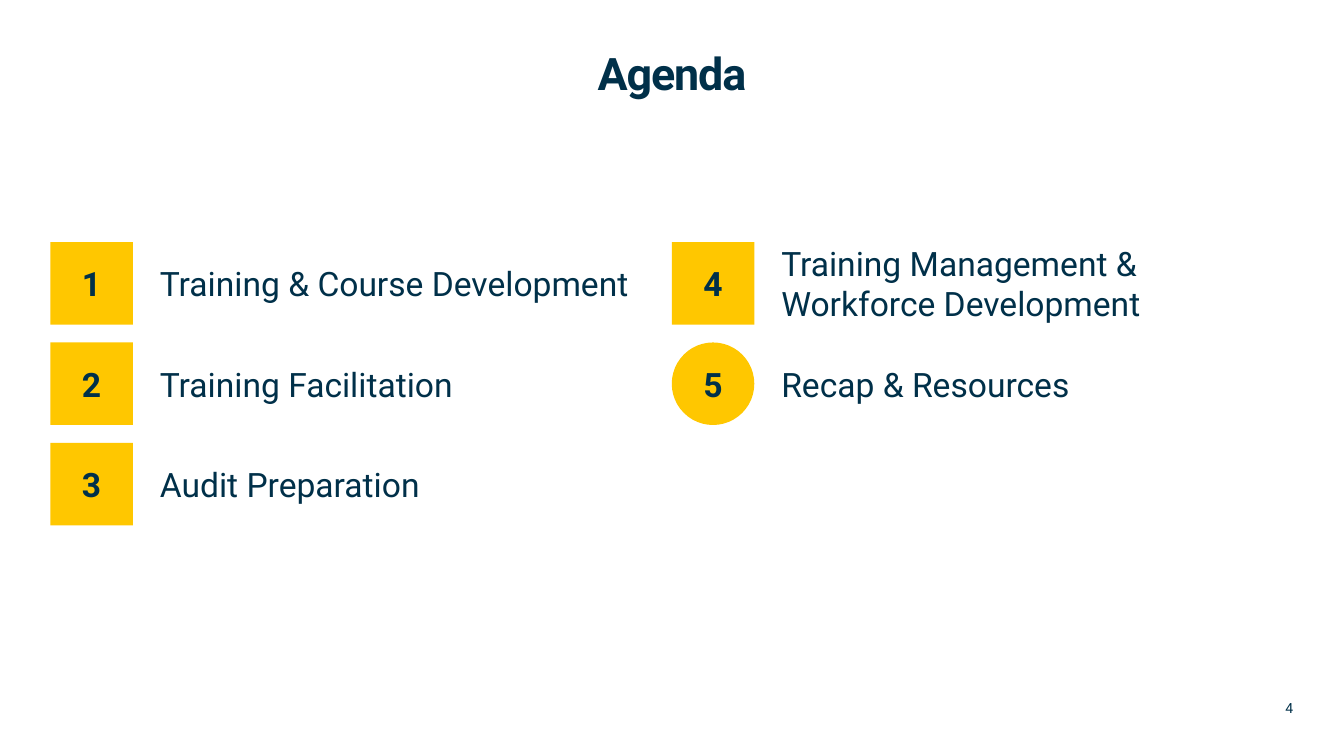
from dataclasses import dataclass

from pptx import Presentation
from pptx.dml.color import RGBColor
from pptx.enum.shapes import MSO_SHAPE
from pptx.enum.text import MSO_ANCHOR, MSO_AUTO_SIZE, PP_ALIGN
from pptx.slide import Slide
from pptx.util import Cm, Pt

SQUARE, CIRCLE = MSO_SHAPE.RECTANGLE, MSO_SHAPE.OVAL
TOP, MIDDLE = MSO_ANCHOR.TOP, MSO_ANCHOR.MIDDLE
LEFT, CENTER, RIGHT = PP_ALIGN.LEFT, PP_ALIGN.CENTER, PP_ALIGN.RIGHT
NO_AUTOFIT = MSO_AUTO_SIZE.NONE
TITLE_ONLY = 5

FONT = "Roboto"
NAVY = "003049"
YELLOW = "FFC700"

MARGIN = 1.27
AGENDA_TOP = 6.1
COLUMN_PITCH = 15.66
ROW_PITCH = 2.53
ROWS = 3
MARKER_SIZE = 2.08
LABEL_OFFSET = 2.76
LABEL_WIDTH = 12.9
LABEL_HEIGHT = 1.55


@dataclass
class AgendaItem:
    label: str
    marker: MSO_SHAPE = SQUARE


AGENDA = [
    AgendaItem("Training & Course Development"),
    AgendaItem("Training Facilitation"),
    AgendaItem("Audit Preparation"),
    AgendaItem("Training Management & Workforce Development"),
    AgendaItem("Recap & Resources", CIRCLE),
]


def color(value: str) -> RGBColor:
    return RGBColor.from_string(value)


def write(shape, text: str, size: float, align: PP_ALIGN = LEFT,
          anchor: MSO_ANCHOR = MIDDLE, bold: bool = False) -> None:
    frame = shape.text_frame
    frame.text = text
    frame.word_wrap = True
    frame.auto_size = NO_AUTOFIT
    frame.vertical_anchor = anchor
    frame.margin_left = frame.margin_right = 0
    frame.margin_top = frame.margin_bottom = 0
    para = frame.paragraphs[0]
    para.alignment = align
    font = para.runs[0].font
    font.name = FONT
    font.size = Pt(size)
    font.bold = bold
    font.color.rgb = color(NAVY)


def add_title(slide: Slide, text: str) -> None:
    title = slide.shapes.title
    title.left, title.top = Cm(MARGIN), Cm(MARGIN)
    title.width, title.height = Cm(31.33), Cm(1.7)
    write(title, text, 32, CENTER, TOP, bold=True)
    para = title.text_frame.paragraphs[0]
    para.line_spacing = Pt(35)
    para.runs[0]._r.get_or_add_rPr().set("spc", "-80")


def add_item(slide: Slide, index: int, item: AgendaItem) -> None:
    column, row = divmod(index, ROWS)
    left = MARGIN + column * COLUMN_PITCH
    top = AGENDA_TOP + row * ROW_PITCH
    marker = slide.shapes.add_shape(
        item.marker, Cm(left), Cm(top), Cm(MARKER_SIZE), Cm(MARKER_SIZE))
    marker.shadow.inherit = False
    marker.fill.solid()
    marker.fill.fore_color.rgb = color(YELLOW)
    marker.line.fill.background()
    write(marker, str(index + 1), 24, CENTER, bold=True)

    label_top = top + (MARKER_SIZE - LABEL_HEIGHT) / 2
    label = slide.shapes.add_textbox(
        Cm(left + LABEL_OFFSET), Cm(label_top), Cm(LABEL_WIDTH), Cm(LABEL_HEIGHT))
    write(label, item.label, 24)


def add_page_number(slide: Slide, number: int) -> None:
    box = slide.shapes.add_textbox(Cm(30.48), Cm(17.63), Cm(2.11), Cm(0.43))
    write(box, str(number), 10, RIGHT, TOP)


def main() -> None:
    deck = Presentation()
    deck.slide_width, deck.slide_height = Cm(33.87), Cm(19.05)
    slide = deck.slides.add_slide(deck.slide_layouts[TITLE_ONLY])
    add_title(slide, "Agenda")
    for index, item in enumerate(AGENDA):
        add_item(slide, index, item)
    add_page_number(slide, 4)
    deck.save("out.pptx")


if __name__ == "__main__":
    main()
